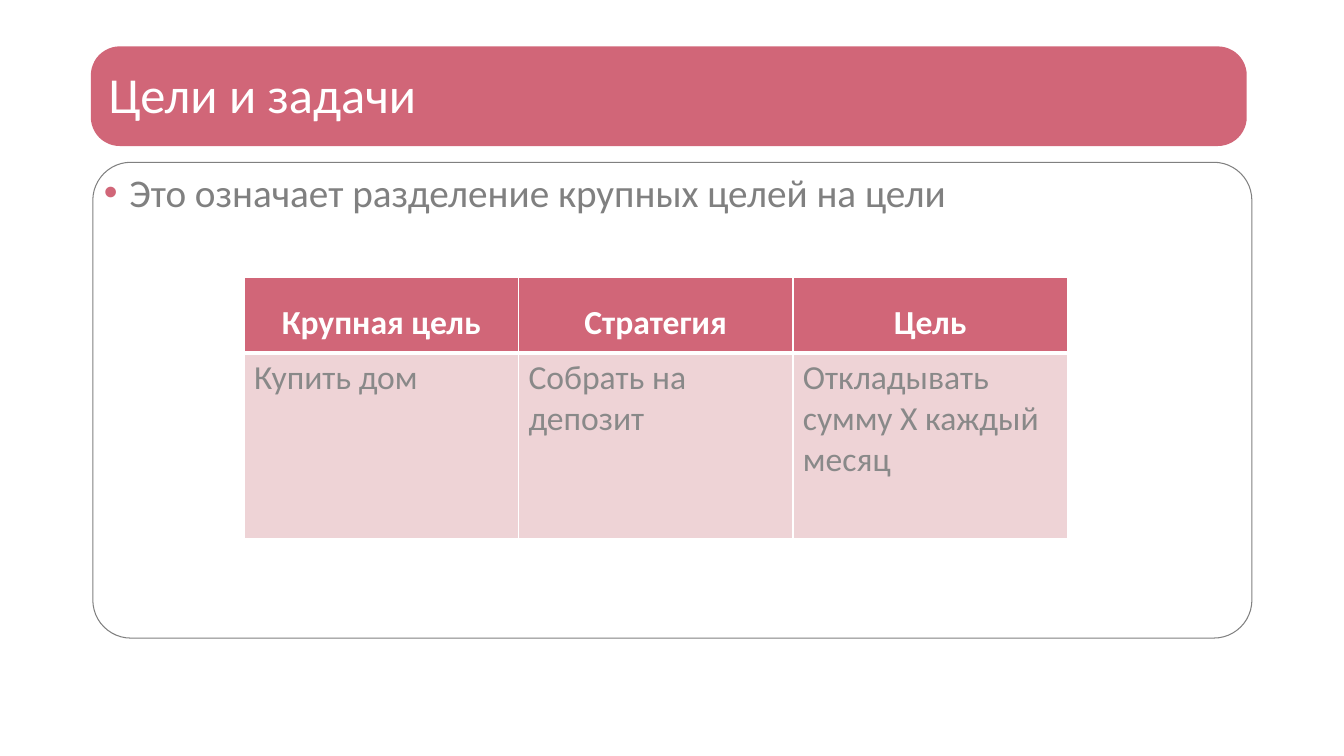
from dataclasses import dataclass

from lxml.etree import SubElement
from pptx import Presentation
from pptx.dml.color import RGBColor
from pptx.enum.shapes import MSO_SHAPE
from pptx.enum.text import MSO_ANCHOR, PP_ALIGN
from pptx.oxml.ns import qn
from pptx.util import Cm, Pt

FONT = "Calibri"
ROSE, PALE_ROSE, WHITE = "D16678", "EED3D6", "FFFFFF"
GREY, CELL_GREY = "808080", "898989"


@dataclass
class Area:
    left: float
    top: float
    width: float
    height: float

    def lengths(self) -> tuple:
        return Cm(self.left), Cm(self.top), Cm(self.width), Cm(self.height)


@dataclass
class TextStyle:
    size: int
    color: str
    bold: bool = False
    spacing: float = 1.0
    align: PP_ALIGN = PP_ALIGN.LEFT


@dataclass
class GoalRow:
    texts: tuple
    height: float
    fill: str
    style: TextStyle
    top_border: float
    bottom_border: float


def rgb(value: str) -> RGBColor:
    return RGBColor.from_string(value)


def add_panel(page, area: Area, rounding: float):
    panel = page.shapes.add_shape(MSO_SHAPE.ROUNDED_RECTANGLE, *area.lengths())
    panel.adjustments[0] = rounding
    panel.shadow.inherit = False
    return panel


def prepare_frame(frame, anchor: MSO_ANCHOR) -> None:
    frame.word_wrap = True
    frame.vertical_anchor = anchor
    frame.margin_left = frame.margin_right = 0
    frame.margin_top = frame.margin_bottom = 0


def write(frame, text: str, style: TextStyle):
    para = frame.paragraphs[0]
    para.alignment = style.align
    para.line_spacing = style.spacing
    span = para.add_run()
    span.text = text
    span.font.name = FONT
    span.font.size = Pt(style.size)
    span.font.bold = style.bold
    span.font.color.rgb = rgb(style.color)
    return para


def add_bullet(para, color: str, indent: float) -> None:
    properties = para._p.get_or_add_pPr()
    properties.set("marL", str(Cm(indent)))
    properties.set("indent", str(-Cm(indent)))
    bullet_color = SubElement(properties, qn("a:buClr"))
    SubElement(bullet_color, qn("a:srgbClr"), val=color)
    SubElement(properties, qn("a:buFont"), typeface="Arial")
    SubElement(properties, qn("a:buChar"), char="•")


def set_borders(cell, top: float, bottom: float) -> None:
    properties = cell._tc.get_or_add_tcPr()
    widths = {"a:lnL": 1, "a:lnR": 1, "a:lnT": top, "a:lnB": bottom}
    for tag, width in widths.items():
        line = SubElement(properties, qn(tag), w=str(Pt(width)))
        fill = SubElement(line, qn("a:solidFill"))
        SubElement(fill, qn("a:srgbClr"), val=WHITE)


def add_goal_table(page, area: Area, rows: list[GoalRow]) -> None:
    count = len(rows[0].texts)
    table = page.shapes.add_table(len(rows), count, *area.lengths()).table
    for column in table.columns:
        column.width = Cm(area.width / count)
    for row_index, row in enumerate(rows):
        table.rows[row_index].height = Cm(row.height)
        for column_index, text in enumerate(row.texts):
            cell = table.cell(row_index, column_index)
            write(cell.text_frame, text, row.style)
            set_borders(cell, row.top_border, row.bottom_border)
            cell.fill.solid()
            cell.fill.fore_color.rgb = rgb(row.fill)


def main() -> None:
    deck = Presentation()
    deck.slide_width, deck.slide_height = Cm(33.87), Cm(19.05)
    page = deck.slides.add_slide(deck.slide_layouts[6])

    # Title bar
    bar = add_panel(page, Area(2.29, 1.17, 29.13, 2.51), 0.29)
    bar.fill.solid()
    bar.fill.fore_color.rgb = rgb(ROSE)
    bar.line.fill.background()
    title = page.shapes.add_textbox(*Area(2.74, 1.57, 28.4, 1.83).lengths())
    prepare_frame(title.text_frame, MSO_ANCHOR.MIDDLE)
    write(title.text_frame, "Цели и задачи", TextStyle(36, WHITE, spacing=0.8))

    # Outlined body panel
    body = add_panel(page, Area(2.34, 4.09, 29.21, 11.99), 0.08)
    body.fill.background()
    body.line.color.rgb = rgb(GREY)
    body.line.width = Pt(0.75)
    prepare_frame(body.text_frame, MSO_ANCHOR.TOP)
    para = write(body.text_frame, "Это означает разделение крупных целей на цели",
                 TextStyle(28, GREY, spacing=0.9))
    add_bullet(para, ROSE, 0.64)

    # Goal table
    header = TextStyle(24, WHITE, bold=True, spacing=1.5, align=PP_ALIGN.CENTER)
    rows = [
        GoalRow(("Крупная цель", "Стратегия", "Цель"), 1.9, ROSE, header, 1, 3),
        GoalRow(("Купить дом", "Собрать на депозит", "Откладывать сумму X каждый месяц"),
                4.67, PALE_ROSE, TextStyle(24, CELL_GREY), 3, 1),
    ]
    add_goal_table(page, Area(6.15, 6.99, 20.75, 6.57), rows)

    deck.save("out.pptx")


if __name__ == "__main__":
    main()
